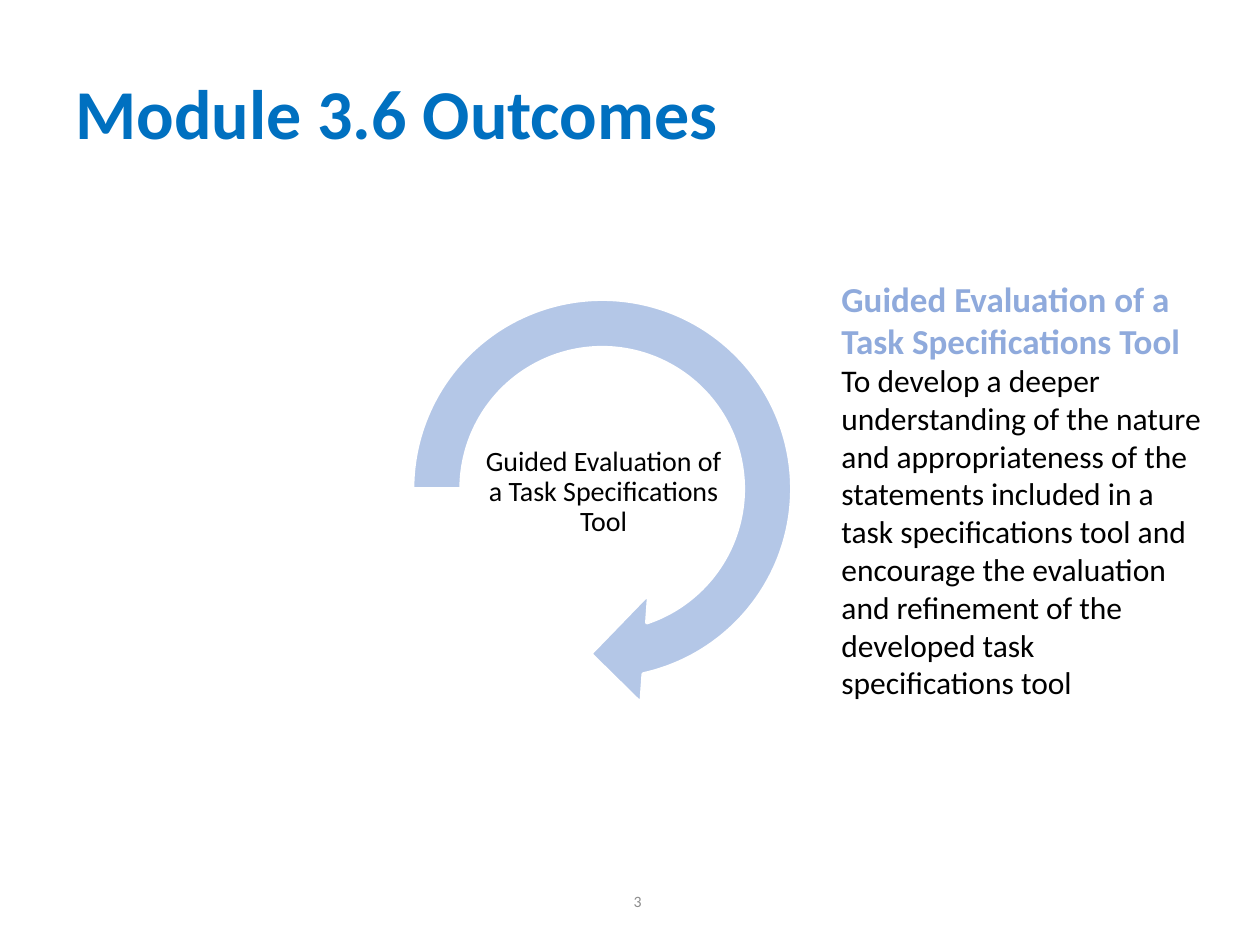
from pptx import Presentation
from pptx.dml.color import RGBColor
from pptx.enum.shapes import MSO_SHAPE as Shape
from pptx.enum.text import MSO_ANCHOR as Anchor, MSO_AUTO_SIZE as AutoSize, PP_ALIGN as Align
from pptx.util import Inches, Pt

WHITE = RGBColor(0xFF, 0xFF, 0xFF)
BLACK = RGBColor(0x00, 0x00, 0x00)
TITLE_BLUE = RGBColor(0x00, 0x70, 0xC0)
HEADING_BLUE = RGBColor(0x8F, 0xAA, 0xDC)
ARROW_BLUE = RGBColor(0xB4, 0xC7, 0xE7)
GREY = RGBColor(0x8C, 0x8C, 0x8C)

TOOL_NAME = "Guided Evaluation of a Task Specifications Tool"
TOOL_AIM = (
    "To develop a deeper understanding of the nature and appropriateness of "
    "the statements included in a task specifications tool and encourage the "
    "evaluation and refinement of the developed task specifications tool"
)


def apply(target, values):
    """Set each named attribute of the target."""
    for name, value in values.items():
        setattr(target, name, value)


def write(paragraph, text, size, color, bold=False, **layout):
    """Fill one paragraph with a formatted run."""
    apply(paragraph, layout)
    run = paragraph.add_run()
    run.text = text
    apply(run.font, {"name": "Calibri", "size": Pt(size), "bold": bold})
    run.font.color.rgb = color


def add_text_box(slide, box, **frame_values):
    """Add a wrapping text box and return its text frame."""
    frame = slide.shapes.add_textbox(*map(Inches, box)).text_frame
    apply(frame, {"word_wrap": True, **frame_values})
    return frame


def place_title(slide, box):
    """Move and format the title placeholder."""
    title = slide.shapes.title
    apply(title, dict(zip(("left", "top", "width", "height"), map(Inches, box))))
    apply(title.text_frame, {"vertical_anchor": Anchor.MIDDLE, "auto_size": AutoSize.NONE})
    write(title.text_frame.paragraphs[0], "Module 3.6 Outcomes", 40, TITLE_BLUE,
          bold=True, alignment=Align.LEFT, line_spacing=0.9)


def add_cycle(slide, box):
    """Draw the circular arrow with its label inside."""
    left, top, width, height = box
    arrow = slide.shapes.add_shape(Shape.CIRCULAR_ARROW, *map(Inches, box))
    for index, value in enumerate((0.11, 11.42, 45, 108, 0.125)):
        arrow.adjustments[index] = value
    arrow.shadow.inherit = False
    arrow.fill.solid()
    arrow.fill.fore_color.rgb = ARROW_BLUE
    arrow.line.color.rgb = WHITE
    arrow.line.width = Pt(2)

    label_width, label_height = 1.95, 0.98
    label_box = (left + (width - label_width) / 2 + 0.01,
                 top + (height - label_height) / 2 + 0.03, label_width, label_height)
    margins = dict.fromkeys(
        ("margin_left", "margin_top", "margin_right", "margin_bottom"), Inches(0.01))
    label = add_text_box(slide, label_box, vertical_anchor=Anchor.MIDDLE, **margins)
    write(label.paragraphs[0], TOOL_NAME, 16, BLACK,
          alignment=Align.CENTER, line_spacing=0.9)


def add_description(slide, box):
    """Add the tool heading and its aim."""
    frame = add_text_box(slide, box, auto_size=AutoSize.SHAPE_TO_FIT_TEXT)
    write(frame.paragraphs[0], TOOL_NAME, 20, HEADING_BLUE, bold=True)
    write(frame.add_paragraph(), TOOL_AIM, 18, BLACK)


def add_page_number(slide, box):
    """Add the page number at the foot of the slide."""
    frame = add_text_box(slide, box, vertical_anchor=Anchor.MIDDLE)
    write(frame.paragraphs[0], "3", 9, GREY, alignment=Align.RIGHT)


def main():
    """Build and save the slide."""
    presentation = Presentation()
    apply(presentation, {"slide_width": Inches(10), "slide_height": Inches(7.5)})
    slide = presentation.slides.add_slide(presentation.slide_layouts.get_by_name("Title Only"))
    place_title(slide, (0.5, 0.3, 9, 1.25))
    add_cycle(slide, (3.03, 2.13, 3.5, 3.5))
    add_description(slide, (6.58, 2.15, 3.1, 3.5))
    add_page_number(slide, (2.94, 6.95, 2.25, 0.4))
    presentation.save("out.pptx")


if __name__ == "__main__":
    main()
